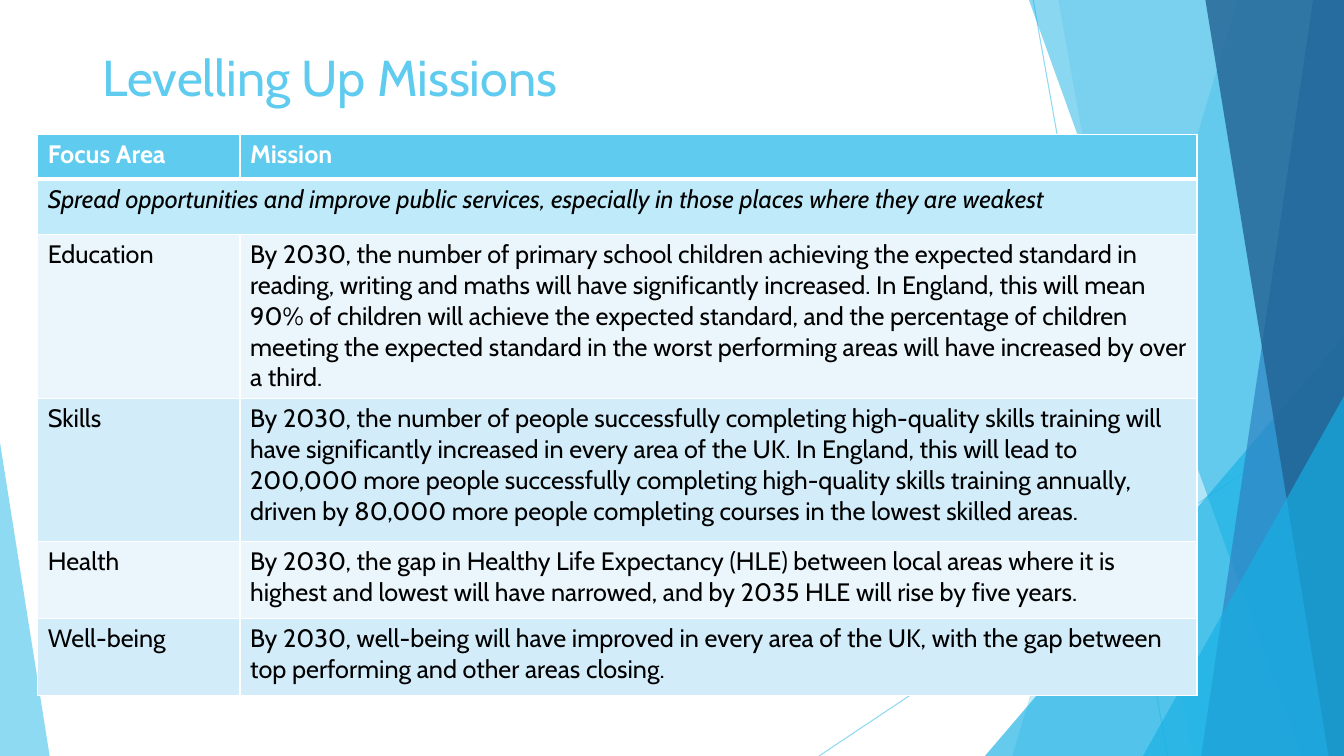
"""Build the Levelling Up Missions slide with its faceted backdrop and table."""
from dataclasses import dataclass

from lxml.etree import SubElement
from pptx import Presentation
from pptx.dml.color import RGBColor
from pptx.enum.shapes import MSO_CONNECTOR, MSO_SHAPE
from pptx.enum.text import MSO_ANCHOR, PP_ALIGN
from pptx.oxml.ns import qn
from pptx.util import Pt

TITLE = "Levelling Up Missions"
HEADERS = ("Focus Area", "Mission")
THEME_STATEMENT = ("Spread opportunities and improve public services, "
                   "especially in those places where they are weakest")
MISSIONS = [
    ("Education",
     "By 2030, the number of primary school children achieving the expected standard in "
     "reading, writing and maths will have significantly increased. In England, this will mean "
     "90% of children will achieve the expected standard, and the percentage of children "
     "meeting the expected standard in the worst performing areas will have increased by over "
     "a third."),
    ("Skills",
     "By 2030, the number of people successfully completing high-quality skills training will "
     "have significantly increased in every area of the UK. In England, this will lead to "
     "200,000 more people successfully completing high-quality skills training annually, "
     "driven by 80,000 more people completing courses in the lowest skilled areas."),
    ("Health",
     "By 2030, the gap in Healthy Life Expectancy (HLE) between local areas where it is "
     "highest and lowest will have narrowed, and by 2035 HLE will rise by five years."),
    ("Well-being",
     "By 2030, well-being will have improved in every area of the UK, with the gap between "
     "top performing and other areas closing."),
]


@dataclass(frozen=True)
class Theme:
    """Colours, font and type sizes."""
    font: str = "Cabin"
    title_size: int = 36
    table_size: int = 18
    sky: str = "5FCBEF"
    cyan: str = "17B0E4"
    blue: str = "2E83C3"
    navy: str = "226292"
    white: str = "FFFFFF"
    black: str = "000000"
    statement: str = "BFEAF9"
    bands: tuple = ("EAF6FC", "D2ECF9")


THEME = Theme()
WIDTH, HEIGHT = 960, 540
COLUMN_WIDTHS = (144.5, 683.5)
ROW_HEIGHTS = (32, 39.5, 102, 102, 55, 55)
RAYS = [((738, 0), (834, 540)), ((960, 290), (585, 540))]
FACETS = [
    ("band", 884, 723, THEME.sky, 36),
    ("band", 756, 852, THEME.sky, 20),
    ("triangle", (703.5, 240, 256.5, 300), 1, THEME.cyan, 66),
    ("band", 735, 929.5, THEME.cyan, 50),
    ("band", 938, 858, THEME.blue, 70),
    ("band", 861, 949, THEME.navy, 80),
    ("triangle", (816.5, 283, 143.5, 257), 1, THEME.cyan, 66),
    ("triangle", (0, 316, 35.5, 224), 0, THEME.sky, 70),
]


def set_alpha(element, percent):
    color = next(element.iter(qn("a:srgbClr")))
    SubElement(color, qn("a:alpha"), val=str(percent * 1000))


def style_font(font, size, color, bold=False, italic=False):
    font.name, font.size = THEME.font, Pt(size)
    font.color.rgb = RGBColor.from_string(color)
    font.bold, font.italic = bold, italic


def add_ray(slide, start, end):
    ray = slide.shapes.add_connector(MSO_CONNECTOR.STRAIGHT, *map(Pt, start + end))
    ray.line.color.rgb = RGBColor.from_string(THEME.sky)
    ray.line.width = Pt(0.75)
    properties = ray.element.spPr
    set_alpha(properties, 70)
    SubElement(properties, qn("a:effectLst"))


def add_facet(slide, kind, first, second, color, alpha):
    if kind == "band":
        corners = [(WIDTH, 0), (WIDTH, HEIGHT), (second, HEIGHT)]
        builder = slide.shapes.build_freeform(Pt(first), 0)
        builder.add_line_segments([(Pt(x), Pt(y)) for x, y in corners], close=True)
        facet = builder.convert_to_shape()
    else:
        facet = slide.shapes.add_shape(MSO_SHAPE.ISOSCELES_TRIANGLE, *map(Pt, first))
        facet.adjustments[0] = second
    facet.shadow.inherit = False
    facet.fill.solid()
    facet.fill.fore_color.rgb = RGBColor.from_string(color)
    set_alpha(facet.element.spPr, alpha)
    facet.line.fill.background()


def add_title(slide):
    title = slide.shapes.title
    title.left, title.top, title.width, title.height = map(Pt, (66, 29, 828, 67))
    title.text_frame.text = TITLE
    title.text_frame.vertical_anchor = MSO_ANCHOR.TOP
    paragraph = title.text_frame.paragraphs[0]
    paragraph.alignment = PP_ALIGN.LEFT
    style_font(paragraph.font, THEME.title_size, THEME.sky)
    title.element.getparent().append(title.element)


def format_cell(cell, text, fill, color=THEME.black, bottom=1, top=1, **emphasis):
    cell.text = text
    style_font(cell.text_frame.paragraphs[0].font, THEME.table_size, color, **emphasis)
    properties = cell._tc.get_or_add_tcPr()
    for side, width in (("L", 1), ("R", 1), ("T", top), ("B", bottom)):
        border = SubElement(properties, qn(f"a:ln{side}"), w=str(Pt(width)))
        solid = SubElement(border, qn("a:solidFill"))
        SubElement(solid, qn("a:srgbClr"), val=THEME.white)
    cell.fill.solid()
    cell.fill.fore_color.rgb = RGBColor.from_string(fill)


def add_missions_table(slide):
    frame = slide.shapes.add_table(
        len(ROW_HEIGHTS), len(COLUMN_WIDTHS), Pt(27), Pt(96),
        Pt(sum(COLUMN_WIDTHS)), Pt(sum(ROW_HEIGHTS)))
    table = frame.table
    for column, width in zip(table.columns, COLUMN_WIDTHS):
        column.width = Pt(width)
    for row, height in zip(table.rows, ROW_HEIGHTS):
        row.height = Pt(height)
    for column, header in enumerate(HEADERS):
        format_cell(table.cell(0, column), header, THEME.sky, THEME.white, bottom=3, bold=True)
    table.cell(1, 0).merge(table.cell(1, 1))
    format_cell(table.cell(1, 0), THEME_STATEMENT, THEME.statement, top=3, italic=True)
    for index, mission in enumerate(MISSIONS):
        for column, text in enumerate(mission):
            format_cell(table.cell(index + 2, column), text, THEME.bands[index % 2])


def main():
    presentation = Presentation()
    presentation.slide_width, presentation.slide_height = Pt(WIDTH), Pt(HEIGHT)
    slide = presentation.slides.add_slide(presentation.slide_layouts[5])
    for start, end in RAYS:
        add_ray(slide, start, end)
    for facet in FACETS:
        add_facet(slide, *facet)
    add_title(slide)
    add_missions_table(slide)
    presentation.save("out.pptx")


if __name__ == "__main__":
    main()
